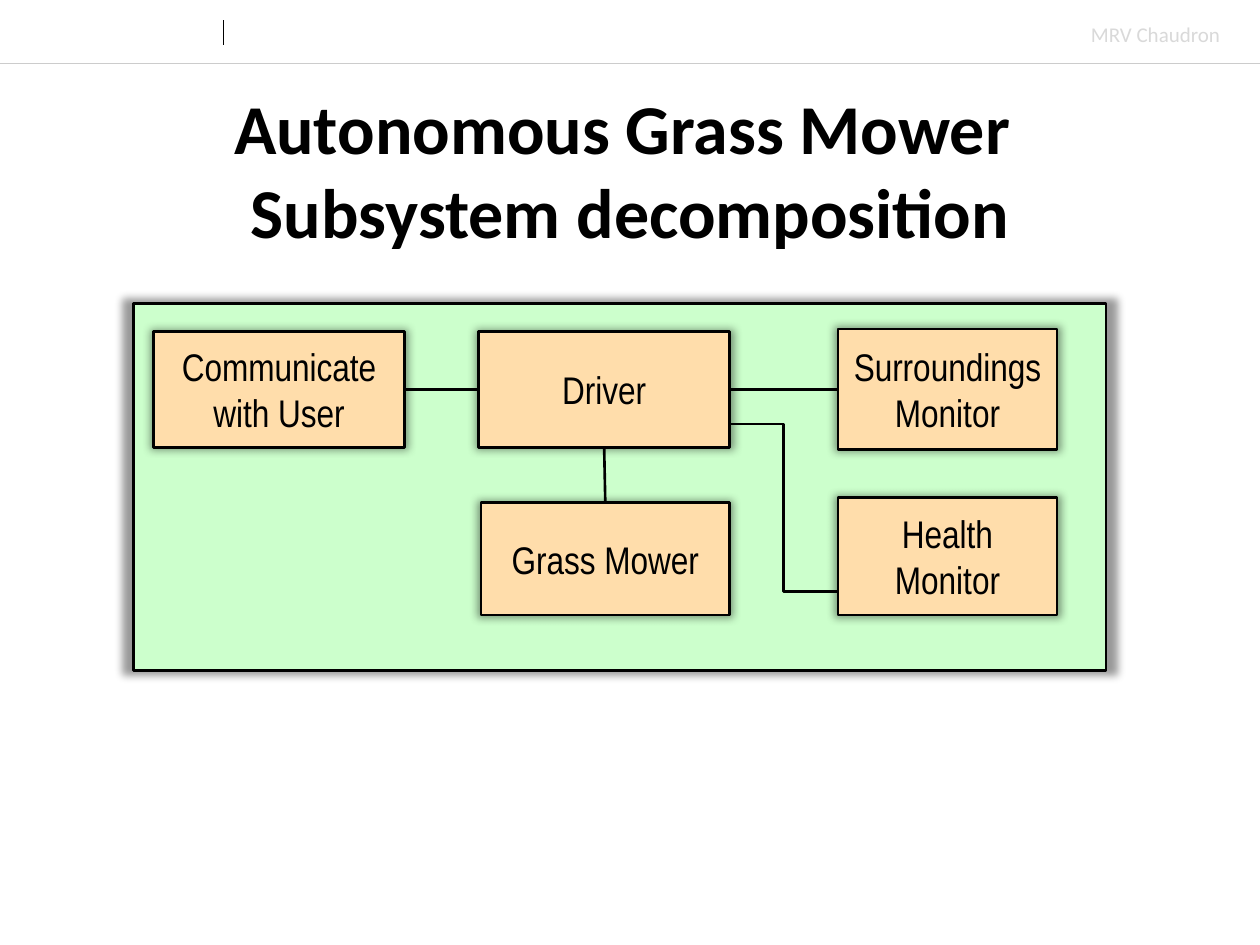
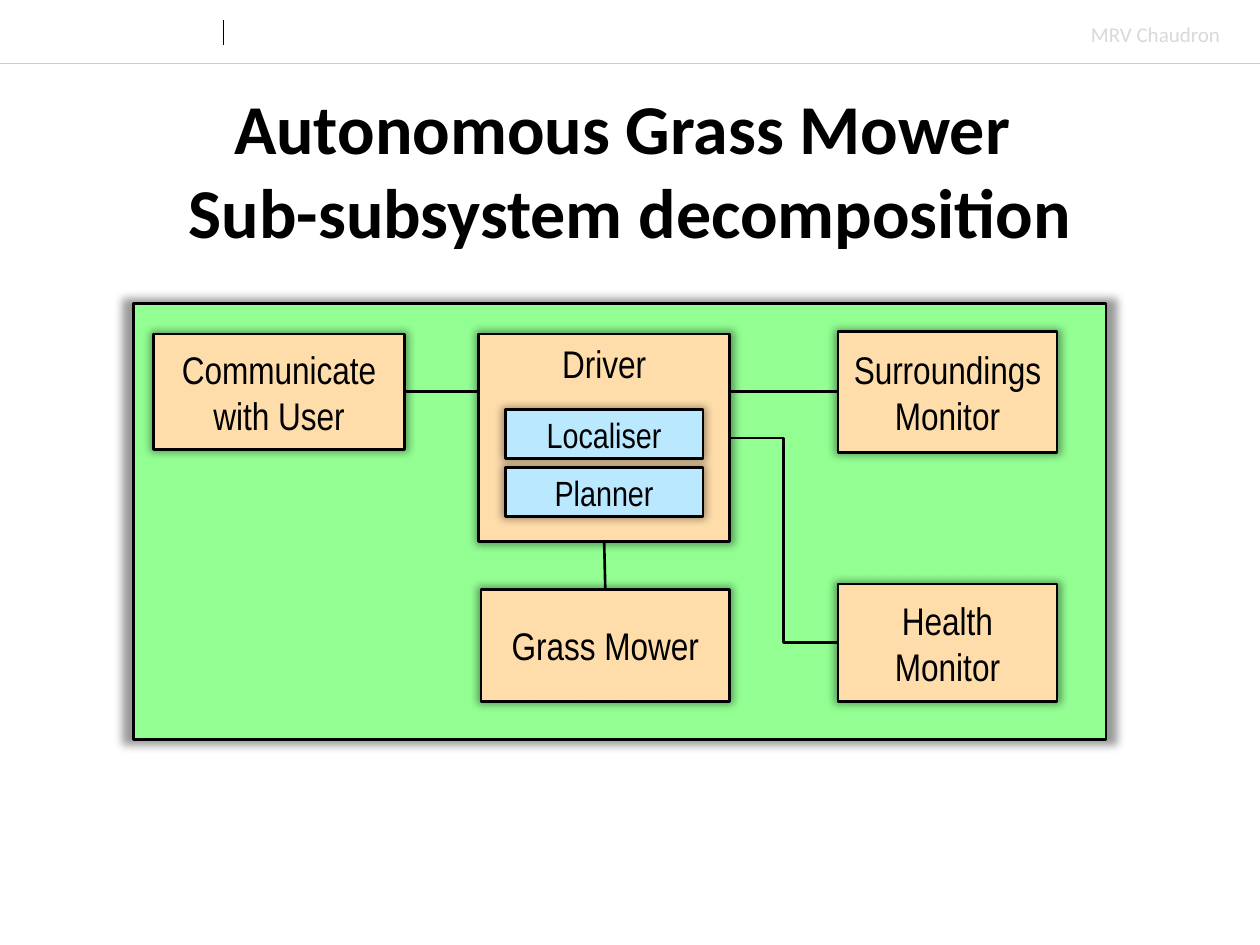
from lxml import etree
from pptx import Presentation
from pptx.dml.color import RGBColor
from pptx.enum.shapes import MSO_CONNECTOR, MSO_SHAPE
from pptx.enum.text import MSO_ANCHOR, MSO_AUTO_SIZE, PP_ALIGN
from pptx.oxml.ns import qn
from pptx.util import Pt

BLACK = "000000"
RULE_GREY = "CCCCCC"
AUTHOR_GREY = "D9D9D9"
SUBSYSTEM_FILL = "FFDDAB"
PART_FILL = "B9E8FF"

TITLE_FONT = {"name": "Calibri", "size": Pt(40), "bold": True}
AUTHOR_FONT = {"name": "Calibri", "size": Pt(12)}
SUBSYSTEM_FONT = {"name": "Arial Narrow", "size": Pt(22)}
PART_FONT = {"name": "Arial Narrow", "size": Pt(20)}

SLIDE_WIDTH, SLIDE_HEIGHT = 720, 540
PANEL_LEFT, PANEL_TOP, PANEL_WIDTH = 76.3, 173.5, 555.8
USER_LEFT, DRIVER_LEFT, MOWER_LEFT, MONITOR_LEFT = 87.8, 273.6, 275, 478.8
BOX_WIDTH, BOX_HEIGHT = 143.3, 66.2
MOWER_WIDTH, MOWER_HEIGHT = 141.8, 64.1
MONITOR_WIDTH, SURROUNDINGS_HEIGHT, HEALTH_HEIGHT = 125.3, 69.1, 67
PART_WIDTH, PART_HEIGHT, PART_PITCH, PART_OFFSET = 113, 28.1, 33.1, 43.2
TOP_SITE, BOTTOM_SITE = 0, 2

DECOMPOSITIONS = [
    {"title": "Autonomous Grass Mower \vSubsystem decomposition",
     "panel_fill": "CCFFCC", "panel_height": 209.5,
     "row_top": 189.4, "driver_height": BOX_HEIGHT, "row_bottom": 351.4,
     "health_link": 0.8, "driver_parts": []},
    {"title": "Autonomous Grass Mower \vSub-subsystem decomposition",
     "panel_fill": "93FF93", "panel_height": 249.1,
     "row_top": 190.8, "driver_height": 118.8, "row_bottom": 400.8,
     "health_link": 0.5, "driver_parts": ["Localiser", "Planner"]},
]


def rgb(value):
    return RGBColor.from_string(value)


def write(shape, text, font, color=BLACK, align=PP_ALIGN.CENTER,
          anchor=MSO_ANCHOR.MIDDLE, wrap=True):
    frame = shape.text_frame
    frame.auto_size = MSO_AUTO_SIZE.NONE
    frame.word_wrap = wrap
    frame.vertical_anchor = anchor
    paragraph = frame.paragraphs[0]
    paragraph.text = text
    paragraph.alignment = align
    for run in paragraph.runs:
        for attribute, value in font.items():
            setattr(run.font, attribute, value)
        run.font.color.rgb = rgb(color)


def add_glow_shadow(shape):
    """Give the shape a soft centred shadow, slightly larger than itself."""
    shape.shadow.inherit = False
    effects = shape._element.spPr.find(qn("a:effectLst"))
    shadow = etree.SubElement(effects, qn("a:outerShdw"), blurRad=str(Pt(5)),
                              sx="102000", sy="102000", algn="ctr", rotWithShape="0")
    black = etree.SubElement(shadow, qn("a:srgbClr"), val=BLACK)
    etree.SubElement(black, qn("a:alpha"), val="40000")


def add_box(slide, left, top, width, height, fill):
    box = slide.shapes.add_shape(MSO_SHAPE.RECTANGLE, Pt(left), Pt(top),
                                 Pt(width), Pt(height))
    box.fill.solid()
    box.fill.fore_color.rgb = rgb(fill)
    box.line.color.rgb = rgb(BLACK)
    box.line.width = Pt(1.5)
    add_glow_shadow(box)
    return box


def add_subsystem(slide, text, left, top, width, height, anchor=MSO_ANCHOR.MIDDLE):
    subsystem = add_box(slide, left, top, width, height, SUBSYSTEM_FILL)
    write(subsystem, text, SUBSYSTEM_FONT, anchor=anchor)
    return subsystem


def add_link(slide, x1, y1, x2, y2, kind=MSO_CONNECTOR.STRAIGHT, color=BLACK, weight=1.5):
    link = slide.shapes.add_connector(kind, Pt(x1), Pt(y1), Pt(x2), Pt(y2))
    link.line.color.rgb = rgb(color)
    link.line.width = Pt(weight)
    etree.SubElement(link._element.spPr, qn("a:effectLst"))
    return link


def add_header(slide):
    add_link(slide, 0, 36, SLIDE_WIDTH, 36, color=RULE_GREY, weight=0.25)
    add_link(slide, 127.5, 11.5, 127.5, 26, weight=0.5)
    author = slide.shapes.add_textbox(Pt(616.3), Pt(8.6), Pt(88.6), Pt(21.6))
    write(author, "MRV Chaudron", AUTHOR_FONT, AUTHOR_GREY, PP_ALIGN.LEFT,
          MSO_ANCHOR.TOP, wrap=False)


def add_title(slide, text):
    title = slide.shapes.title
    title.left, title.top = Pt(0), Pt(54.7)
    title.width, title.height = Pt(SLIDE_WIDTH), Pt(83.5)
    write(title, text, TITLE_FONT)


def add_driver_parts(slide, names, driver_top):
    left = DRIVER_LEFT + (BOX_WIDTH - PART_WIDTH) / 2
    for index, name in enumerate(names):
        top = driver_top + PART_OFFSET + index * PART_PITCH
        part = add_box(slide, left, top, PART_WIDTH, PART_HEIGHT, PART_FILL)
        write(part, name, PART_FONT)


def add_decomposition(slide, plan):
    row_top, driver_height = plan["row_top"], plan["driver_height"]
    row_middle = row_top + BOX_HEIGHT / 2
    driver_right = DRIVER_LEFT + BOX_WIDTH
    health_top = plan["row_bottom"] - HEALTH_HEIGHT
    driver_anchor = MSO_ANCHOR.TOP if plan["driver_parts"] else MSO_ANCHOR.MIDDLE

    add_box(slide, PANEL_LEFT, PANEL_TOP, PANEL_WIDTH, plan["panel_height"],
            plan["panel_fill"])
    add_subsystem(slide, "Communicate\vwith User", USER_LEFT, row_top,
                  BOX_WIDTH, BOX_HEIGHT)
    add_subsystem(slide, "Health\vMonitor", MONITOR_LEFT, health_top,
                  MONITOR_WIDTH, HEALTH_HEIGHT)
    add_subsystem(slide, "Surroundings\vMonitor", MONITOR_LEFT,
                  row_middle - SURROUNDINGS_HEIGHT / 2,
                  MONITOR_WIDTH, SURROUNDINGS_HEIGHT)
    mower = add_subsystem(slide, "Grass Mower", MOWER_LEFT,
                          plan["row_bottom"] - MOWER_HEIGHT, MOWER_WIDTH, MOWER_HEIGHT)
    driver = add_subsystem(slide, "Driver", DRIVER_LEFT, row_top, BOX_WIDTH,
                           driver_height, driver_anchor)

    add_link(slide, MONITOR_LEFT, row_middle, driver_right, row_middle)
    add_link(slide, DRIVER_LEFT, row_middle, USER_LEFT + BOX_WIDTH, row_middle)
    add_link(slide, driver_right, row_top + plan["health_link"] * driver_height,
             MONITOR_LEFT, health_top + plan["health_link"] * HEALTH_HEIGHT,
             MSO_CONNECTOR.ELBOW)
    mower_link = add_link(slide, 0, 0, 0, 0)
    mower_link.begin_connect(mower, TOP_SITE)
    mower_link.end_connect(driver, BOTTOM_SITE)
    add_driver_parts(slide, plan["driver_parts"], row_top)


def main():
    deck = Presentation()
    deck.slide_width, deck.slide_height = Pt(SLIDE_WIDTH), Pt(SLIDE_HEIGHT)
    title_only = deck.slide_layouts[5]
    for plan in DECOMPOSITIONS:
        slide = deck.slides.add_slide(title_only)
        add_header(slide)
        add_title(slide, plan["title"])
        add_decomposition(slide, plan)
    deck.save("out.pptx")


if __name__ == "__main__":
    main()
